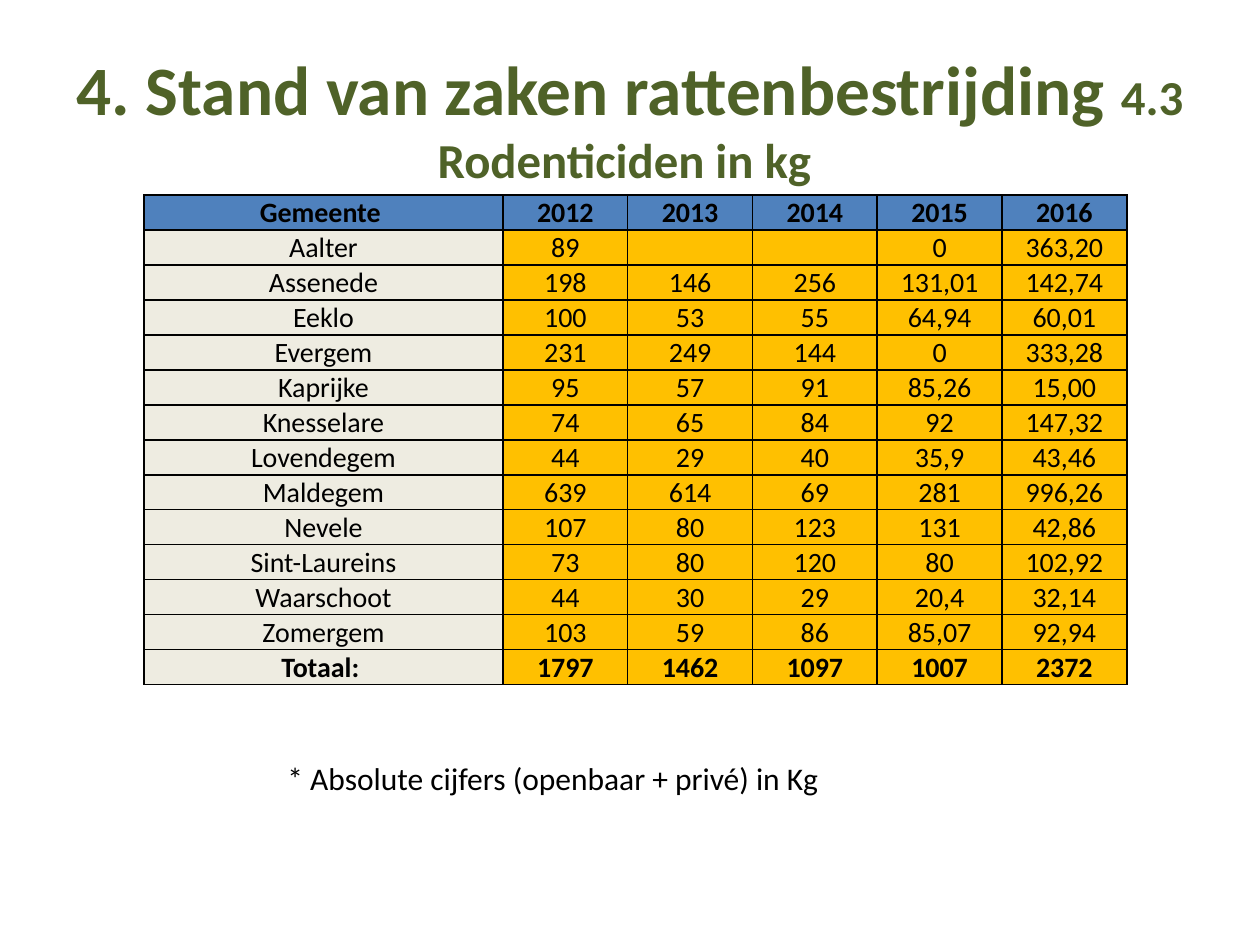
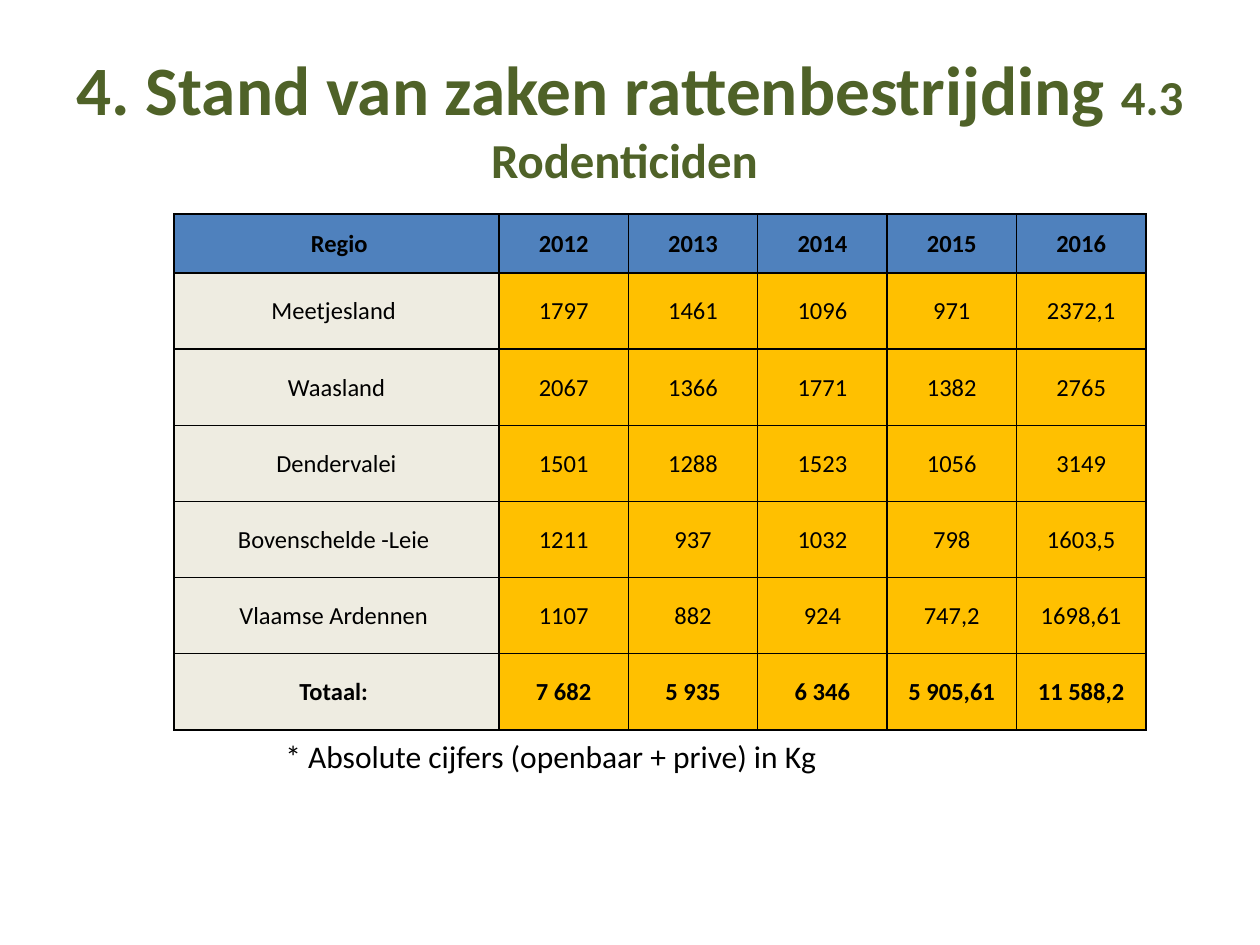
from lxml.etree import SubElement
from pptx import Presentation
from pptx.dml.color import RGBColor
from pptx.enum.text import MSO_ANCHOR, PP_ALIGN
from pptx.oxml import parse_xml
from pptx.oxml.ns import nsdecls, qn
from pptx.util import Emu, Pt

COLOURS = {
    "title": "4F6228",
    "text": "000000",
    "border": "000000",
    "header": "4F81BD",
    "name": "EEECE1",
    "value": "FFC000",
}
FONT = "Calibri"
TITLE_BOX = (63, 38, 1134, 158)
CHAPTER = "4. Stand van zaken rattenbestrijding "
YEARS = ["2012", "2013", "2014", "2015", "2016"]

MUNICIPALITIES = [
    ["Gemeente ", *YEARS],
    ["Aalter", "89", "", "", "0", "363,20"],
    ["Assenede", "198", "146", "256", "131,01", "142,74"],
    ["Eeklo", "100", "53", "55", "64,94", "60,01"],
    ["Evergem", "231", "249", "144", "0", "333,28"],
    ["Kaprijke", "95", "57", "91", "85,26", "15,00"],
    ["Knesselare", "74", "65", "84", "92", "147,32"],
    ["Lovendegem", "44", "29", "40", "35,9", "43,46"],
    ["Maldegem", "639", "614", "69", "281", "996,26"],
    ["Nevele", "107", "80", "123", "131", "42,86"],
    ["Sint-Laureins", "73", "80", "120", "80", "102,92"],
    ["Waarschoot", "44", "30", "29", "20,4", "32,14"],
    ["Zomergem", "103", "59", "86", "85,07", "92,94"],
    ["Totaal: ", "1797", "1462", "1097", "1007", "2372"],
]

REGIONS = [
    [" Regio", *YEARS],
    ["Meetjesland ", "1797", "1461", "1096", "971", "2372,1"],
    ["Waasland", "2067", "1366", "1771", "1382", "2765"],
    ["Dendervalei", "1501", "1288", "1523", "1056", "3149"],
    ["Bovenschelde -Leie ", "1211", "937", "1032", "798", "1603,5"],
    ["Vlaamse Ardennen ", "1107", "882", "924", "747,2", "1698,61"],
    ["Totaal: ", "7 682", "5 935", "6 346", "5 905,61", "11 588,2"],
]


def px(length):
    return Emu(round(length * 914400 / 126))


def style(run, size, colour, bold=False):
    run.font.name = FONT
    run.font.size = Pt(size)
    run.font.bold = bold
    run.font.color.rgb = RGBColor.from_string(COLOURS[colour])


def add_text_frame(slide, box):
    frame = slide.shapes.add_textbox(*map(px, box)).text_frame
    frame.word_wrap = True
    return frame


def add_title(slide, box, section):
    frame = add_text_frame(slide, box)
    frame.vertical_anchor = MSO_ANCHOR.MIDDLE
    heading = frame.paragraphs[0]
    heading.alignment = PP_ALIGN.CENTER
    for words, size in ((CHAPTER, 39.6), (section, 27.9)):
        run = heading.add_run()
        run.text = words
        style(run, size, "title", bold=True)


def add_note(slide, box, words):
    frame = add_text_frame(slide, box)
    frame.text = words
    style(frame.paragraphs[0].runs[0], 18, "text")


def add_borders(cell):
    properties = cell._tc.get_or_add_tcPr()
    for position, side in enumerate("LRTB"):
        properties.insert(position, parse_xml(
            f'<a:ln{side} {nsdecls("a")} w="12700"><a:solidFill>'
            f'<a:srgbClr val="{COLOURS["border"]}"/></a:solidFill></a:ln{side}>'))


def fill_cell(cell, words, size, fill, bold):
    cell.fill.solid()
    cell.fill.fore_color.rgb = RGBColor.from_string(COLOURS[fill])
    cell.vertical_anchor = MSO_ANCHOR.MIDDLE
    cell.margin_left = cell.margin_right = cell.margin_top = px(1)
    cell.margin_bottom = 0
    add_borders(cell)
    paragraph = cell.text_frame.paragraphs[0]
    paragraph.text = words
    paragraph.alignment = PP_ALIGN.CENTER
    for run in paragraph.runs:
        style(run, size, "text", bold)
    if not words:
        SubElement(paragraph._p, qn("a:endParaRPr"), sz=str(size * 100))


def add_usage_table(slide, box, rows, name_width, header_height, size):
    left, top, width, height = box
    table = slide.shapes.add_table(len(rows), len(rows[0]), *map(px, box)).table
    table.first_row = table.horz_banding = False
    value_width = (width - name_width) / len(YEARS)
    row_height = (height - header_height) / (len(rows) - 1)
    for index, column in enumerate(table.columns):
        column.width = px(value_width if index else name_width)
    for index, row in enumerate(table.rows):
        row.height = px(row_height if index else header_height)
    for r, row in enumerate(rows):
        for c, words in enumerate(row):
            fill = "header" if r == 0 else "value" if c else "name"
            fill_cell(table.cell(r, c), words, size, fill, r in (0, len(rows) - 1))


def add_slide(deck, section):
    slide = deck.slides.add_slide(deck.slide_layouts[6])
    add_title(slide, TITLE_BOX, section)
    return slide


def add_municipality_slide(deck):
    slide = add_slide(deck, "4.3 Rodenticiden in kg ")
    add_usage_table(slide, (144, 195, 983, 490), MUNICIPALITIES, 359, 35, 16)
    add_note(slide, (275, 753, 665, 50), "* Absolute cijfers (openbaar + privé) in Kg")


def add_region_slide(deck):
    slide = add_slide(deck, "4.3 Rodenticiden ")
    add_note(slide, (273, 731, 665, 50), "* Absolute cijfers (openbaar + prive) in Kg")
    add_usage_table(slide, (174, 214, 972, 516), REGIONS, 325, 59, 14)


def main():
    deck = Presentation()
    deck.slide_width, deck.slide_height = px(1260), px(945)
    add_municipality_slide(deck)
    add_region_slide(deck)
    deck.save("out.pptx")


if __name__ == "__main__":
    main()
